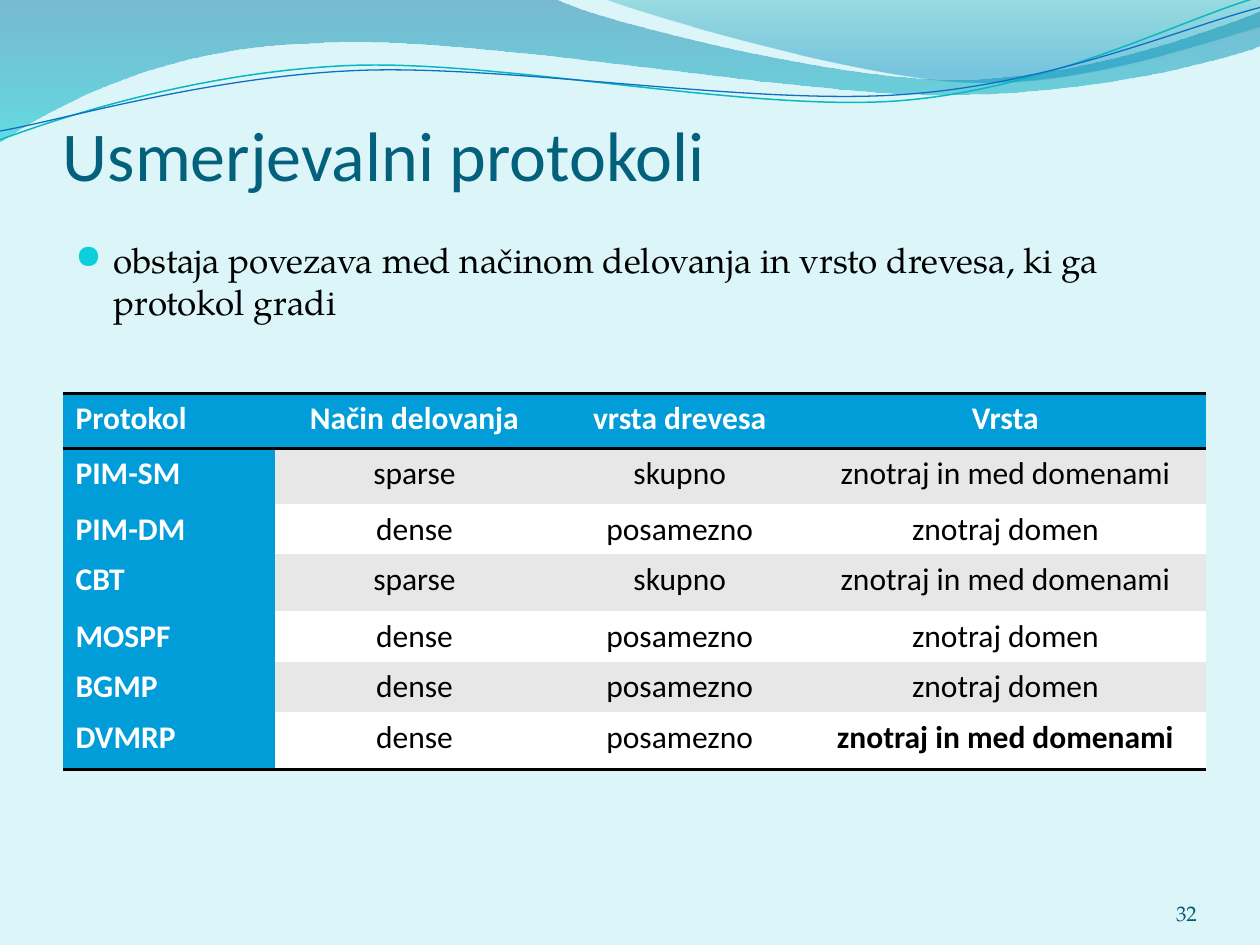
from math import cos, radians, sin

from lxml import etree
from pptx import Presentation
from pptx.dml.color import RGBColor
from pptx.enum.text import MSO_ANCHOR as ANCHOR, PP_ALIGN as ALIGN
from pptx.oxml import parse_xml
from pptx.oxml.ns import nsdecls, qn
from pptx.util import Inches, Pt

HEAD, BODY = "Calibri", "TeX Gyre Pagella"
rgb = RGBColor.from_string

prs = Presentation()
prs.slide_width, prs.slide_height = Inches(10), Inches(7.5)
s = prs.slides.add_slide(prs.slide_layouts[6])
s.background.fill.solid()
s.background.fill.fore_color.rgb = rgb("DBF5F9")


def add_wave(start, pieces, closed):
    """Draw a freeform; a piece holds one point (line) or three (Bezier curve)."""
    fb = s.shapes.build_freeform(Inches(start[0]), Inches(start[1]), scale=1.0)
    points = [(Inches(x), Inches(y)) for piece in pieces for x, y in piece]
    fb.add_line_segments(points, close=closed)
    sp = fb.convert_to_shape()
    sp.shadow.inherit = False
    # Join the three points of each curve into one Bezier segment
    segments = iter(list(sp._element.iter(qn("a:lnTo"))))
    for piece in pieces:
        group = [next(segments) for _ in piece]
        if len(group) == 3:
            curve = etree.Element(qn("a:cubicBezTo"))
            group[0].addprevious(curve)
            for segment in group:
                curve.append(segment[0])
                segment.getparent().remove(segment)
    return sp


def add_text(box, text, font, size, color, align=ALIGN.LEFT, anchor=ANCHOR.TOP, insets=None):
    sp = s.shapes.add_textbox(*map(Inches, box))
    tf = sp.text_frame
    tf.word_wrap = True
    tf.vertical_anchor = anchor
    if insets:
        tf.margin_left, tf.margin_top, tf.margin_right, tf.margin_bottom = map(Inches, insets)
    p = tf.paragraphs[0]
    p.alignment = align
    r = p.add_run()
    r.text = text
    r.font.name, r.font.size, r.font.color.rgb = font, Pt(size), rgb(color)
    return p


# Gradient waves: start, pieces, (position, colour, opacity) of each stop
waves = [
    ((0, 0),
     [[(4.4, -0.01)],
      [(4.76, 0.17), (6.64, 0.63), (7.58, 0.63)],
      [(8.53, 0.63), (9.58, 0.26), (10, 0.09)],
      [(10.01, 0.36)],
      [(9.83, 0.44), (8.7, 0.76), (7.46, 0.75)],
      [(6.22, 0.75), (3.82, 0.28), (2.57, 0.34)],
      [(1.29, 0.36), (0.46, 0.83), (-0.01, 1.13)],
      [(0, 0)]],
     [(0, "0074A1", 45), (1, "00C6CF", 55)]),
    ((4.79, -0.01),
     [[(5.09, 0.11), (6.82, 0.62), (7.69, 0.65)],
      [(8.56, 0.69), (9.61, 0.32), (10, 0.21)],
      [(10, 0)],
      [(4.79, -0.01)]],
     [(0, "00A1A9", 30), (0.8, "008BBF", 45)]),
]
for start, pieces, stops in waves:
    sp = add_wave(start, pieces, True)
    sp.line.fill.background()
    sp.fill.gradient()
    sp.fill.gradient_angle = 270
    for stop, (pos, color, _) in zip(sp.fill.gradient_stops, stops):
        stop.position = pos
        stop.color.rgb = rgb(color)
    for clr, (_, _, opacity) in zip(sp._element.spPr.iter(qn("a:srgbClr")), stops):
        etree.SubElement(clr, qn("a:alpha"), val=str(opacity * 1000))

# Thin wave lines, turned about their centre: centre, pieces, colour, width
wave_lines = [
    ((4.99, 0.58),
     [[(0, 1.11)],
      [(0.48, 0.93), (1.58, 0.57), (2.77, 0.52)],
      [(3.95, 0.47), (5.93, 0.89), (7.13, 0.8)],
      [(8.33, 0.71), (9.38, 0.15), (9.98, -0.02)]], "0AB8BF", 0.85),
    ((5, 0.59),
     [[(0, 1.04)],
      [(0.47, 0.96), (1.64, 0.61), (2.83, 0.56)],
      [(4.03, 0.51), (5.97, 0.84), (7.17, 0.75)],
      [(8.36, 0.67), (9.41, 0.21), (10, 0.06)]], "0F6FC6", 0.75),
]
tilt = 2.7
c, d = cos(radians(tilt)), sin(radians(tilt))
for (cx, cy), pieces, color, width in wave_lines:
    level = [[(cx + (x - cx) * c - (y - cy) * d, cy + (x - cx) * d + (y - cy) * c)
              for x, y in piece] for piece in pieces]
    sp = add_wave(level[0][0], level[1:], False)
    sp.rotation = 360 - tilt
    sp.fill.background()
    sp.line.color.rgb = rgb(color)
    sp.line.width = Pt(width)

# Title
add_text((0.5, 0.76, 9, 0.79), "Usmerjevalni protokoli", HEAD, 40, "04617B",
         anchor=ANCHOR.BOTTOM, insets=(0, 0.05, 0, 0))

# Protocol table
rows = [
    ("Protokol", "Način delovanja", "vrsta drevesa", "Vrsta"),
    ("PIM-SM", "sparse", "skupno", "znotraj in med domenami"),
    ("PIM-DM", "dense", "posamezno", "znotraj domen"),
    ("CBT", "sparse", "skupno", "znotraj in med domenami"),
    ("MOSPF", "dense", "posamezno", "znotraj domen"),
    ("BGMP", "dense", "posamezno", "znotraj domen"),
    ("DVMRP", "dense", "posamezno", "znotraj in med domenami"),
]
col_widths = [1.68, 2.22, 1.99, 3.18]
row_heights = [0.44, 0.44, 0.26, 0.45, 0.26, 0.26, 0.46]  # low rows grow to fit the text
last_row, last_col = len(rows) - 1, len(col_widths) - 1
frame = s.shapes.add_table(len(rows), len(col_widths), Inches(0.5), Inches(3.12),
                           Inches(sum(col_widths)), Inches(2.99))
table = frame.table
table.first_row = table.horz_banding = False
style = table._tbl.tblPr.find(qn("a:tableStyleId"))
style.text = "{2D5ABB26-0587-4C30-8999-92F81FD0307C}"  # no style, no grid
for col, width in zip(table.columns, col_widths):
    col.width = Inches(width)
for row, height in zip(table.rows, row_heights):
    row.height = Inches(height)
frame.height = Inches(2.99)

for i, texts in enumerate(rows):
    edges = {0: ["lnT", "lnB"], last_row: ["lnB"]}.get(i, [])
    for j, text in enumerate(texts):
        cell = table.cell(i, j)
        heading = i == 0 or j == 0
        cell.fill.solid()
        cell.fill.fore_color.rgb = rgb("009DD9" if heading else "E7E7E7" if i % 2 else "FFFFFF")
        p = cell.text_frame.paragraphs[0]
        p.alignment = ALIGN.CENTER if j else ALIGN.LEFT
        r = p.add_run()
        r.text = text
        r.font.name, r.font.size = HEAD, Pt(18)
        r.font.bold = heading or (i, j) == (last_row, last_col)
        r.font.color.rgb = rgb("FFFFFF" if heading else "000000")
        for k, edge in enumerate(edges):
            cell._tc.get_or_add_tcPr().insert(k, parse_xml(
                f'<a:{edge} {nsdecls("a")} w="{Pt(2)}"><a:solidFill>'
                f'<a:srgbClr val="000000"/></a:solidFill></a:{edge}>'))

# Bullet text
p = add_text((0.5, 1.84, 9, 5.21),
             "obstaja povezava med načinom delovanja in vrsto drevesa, ki ga protokol gradi",
             BODY, 20, "000000")
p.space_before = Pt(4)
pPr = p._p.get_or_add_pPr()
pPr.set("marL", str(Inches(0.3)))
pPr.set("indent", str(Inches(-0.3)))
bu_clr = etree.SubElement(pPr, qn("a:buClr"))
etree.SubElement(bu_clr, qn("a:srgbClr"), val="0BD0D9")
etree.SubElement(pPr, qn("a:buSzPct"), val="95000")
etree.SubElement(pPr, qn("a:buFont"), typeface="OpenSymbol")
etree.SubElement(pPr, qn("a:buChar"), char="●")

# Slide number
add_text((8.67, 6.95, 0.83, 0.4), "32", BODY, 12, "045D75",
         align=ALIGN.RIGHT, anchor=ANCHOR.BOTTOM, insets=(0, 0, 0, 0))

prs.save("out.pptx")
